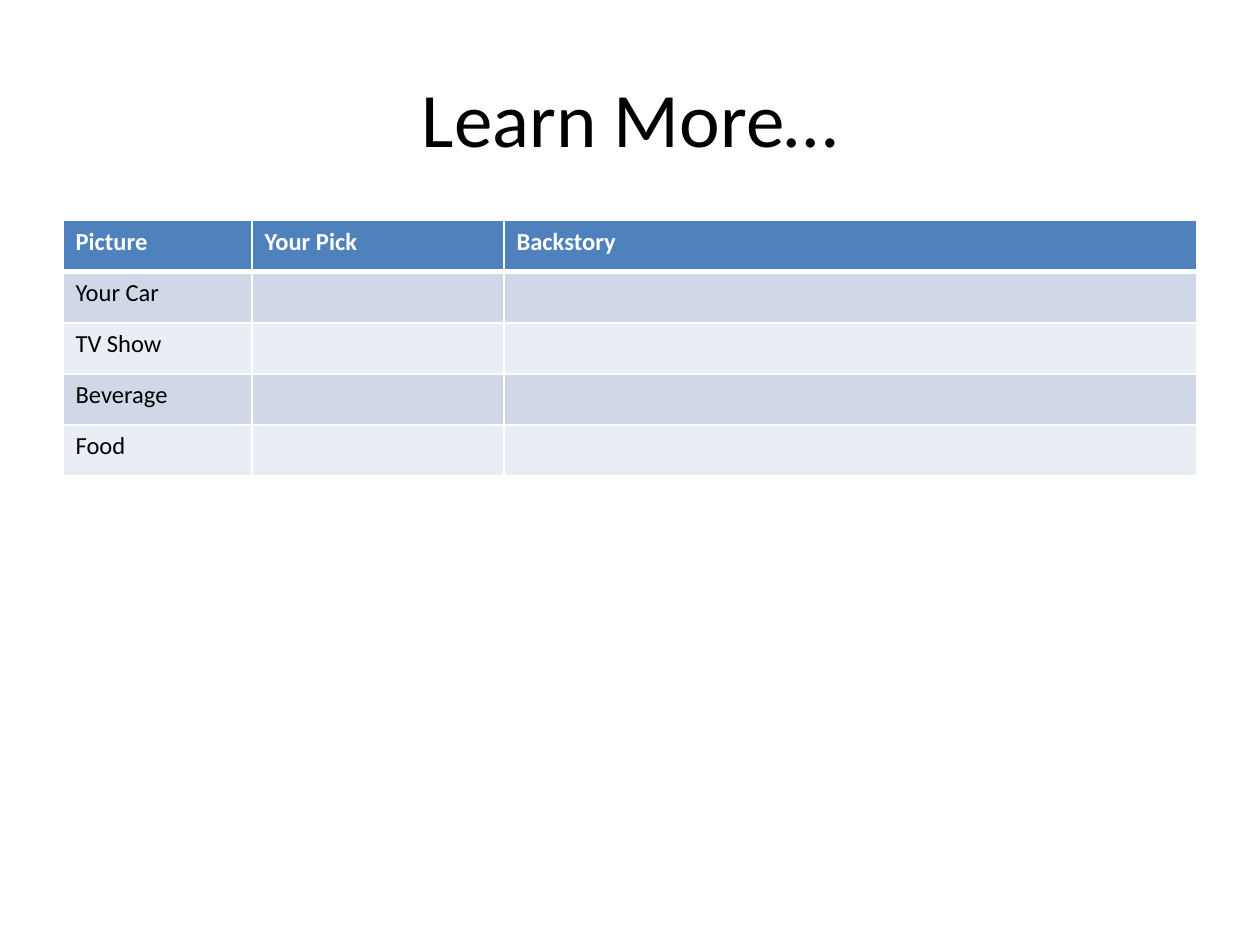
from lxml.etree import SubElement
from pptx import Presentation
from pptx.dml.color import RGBColor
from pptx.enum.text import MSO_ANCHOR as Anchor, PP_ALIGN as Align
from pptx.oxml.ns import qn
from pptx.util import Inches, Pt

# Content
TITLE = "Learn More…"
ROWS = [
    ("Picture", "Your Pick", "Backstory"),
    ("Your Car", "", ""),
    ("TV Show", "", ""),
    ("Beverage", "", ""),
    ("Food", "", ""),
]
COLUMN_WIDTHS = (1.5, 2, 5.5)
LEFT, TABLE_TOP, TABLE_HEIGHT = 0.5, 1.75, 2.03
FONT = "Calibri"
COLORS = {
    "text": "000000",
    "header": "4F81BD",
    "odd": "D0D8E8",
    "even": "E9EDF4",
    "white": "FFFFFF",
}


def write_text(text_frame, text, size, color="text", bold=False, align=Align.LEFT):
    paragraph = text_frame.paragraphs[0]
    paragraph.alignment = align
    paragraph.font.size = Pt(size)
    if text:
        run = paragraph.add_run()
        run.text = text
        run.font.name = FONT
        run.font.size = Pt(size)
        run.font.bold = bold
        run.font.color.rgb = RGBColor.from_string(COLORS[color])


def set_borders(cell, bottom=1, top=1):
    properties = cell._tc.get_or_add_tcPr()
    for side, width in (("L", 1), ("R", 1), ("T", top), ("B", bottom)):
        line = SubElement(properties, qn(f"a:ln{side}"), w=str(Pt(width)))
        fill = SubElement(line, qn("a:solidFill"))
        SubElement(fill, qn("a:srgbClr"), val=COLORS["white"])


presentation = Presentation()
presentation.slide_width, presentation.slide_height = Inches(10), Inches(7.5)
slide = presentation.slides.add_slide(presentation.slide_layouts[5])

# Title
title = slide.shapes.title
title.left, title.top = Inches(LEFT), Inches(0.3)
title.width, title.height = Inches(9), Inches(1.25)
title.text_frame.vertical_anchor = Anchor.MIDDLE
write_text(title.text_frame, TITLE, size=44, align=Align.CENTER)

# Table with a header row and alternating bands
table = slide.shapes.add_table(
    len(ROWS), len(COLUMN_WIDTHS), Inches(LEFT), Inches(TABLE_TOP),
    Inches(sum(COLUMN_WIDTHS)), Inches(TABLE_HEIGHT),
).table
for column, width in zip(table.columns, COLUMN_WIDTHS):
    column.width = Inches(width)

for row_index, row in enumerate(ROWS):
    is_header = row_index == 0
    band = "header" if is_header else "odd" if row_index % 2 else "even"
    for column_index, text in enumerate(row):
        cell = table.cell(row_index, column_index)
        set_borders(cell, bottom=3 if is_header else 1, top=3 if row_index == 1 else 1)
        cell.fill.solid()
        cell.fill.fore_color.rgb = RGBColor.from_string(COLORS[band])
        write_text(cell.text_frame, text, size=14, bold=is_header,
                   color="white" if is_header else "text")

presentation.save("out.pptx")
